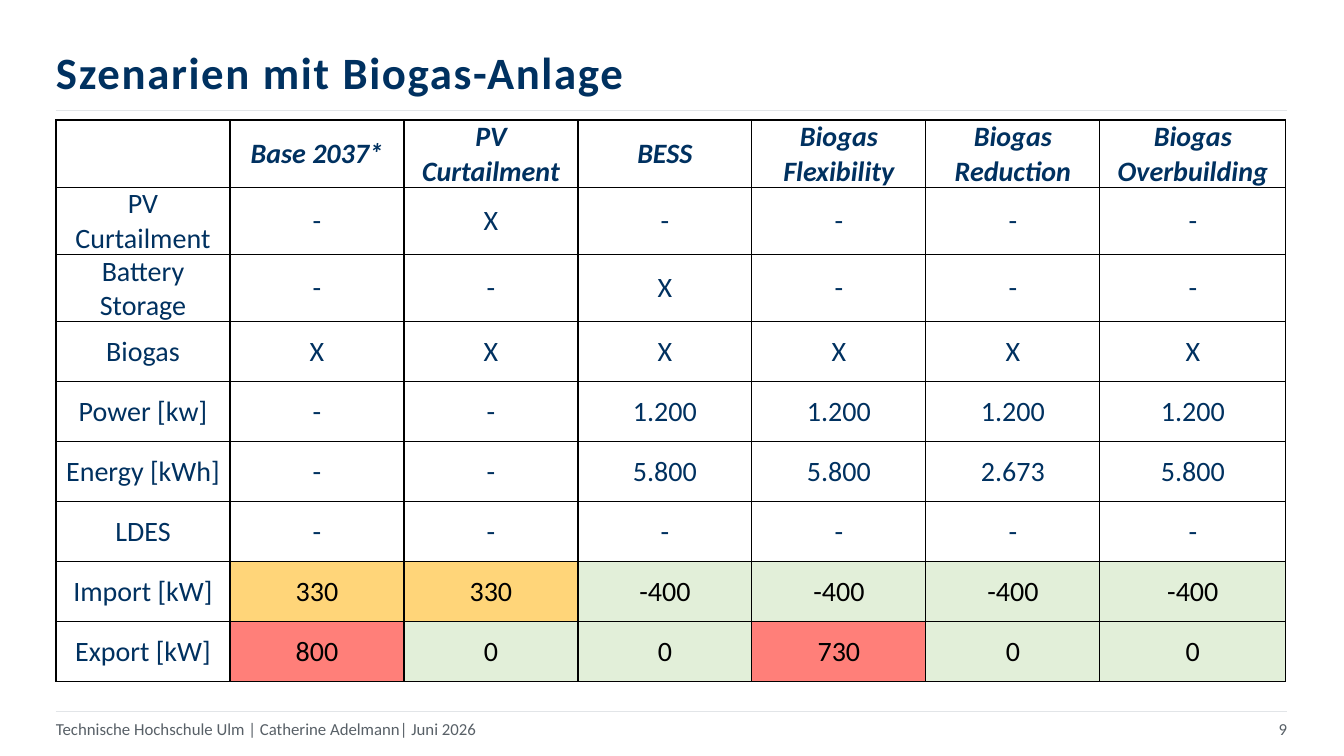
"""Build the slide comparing the biogas plant scenarios."""
from lxml import etree
from pptx import Presentation
from pptx.dml.color import RGBColor
from pptx.enum.shapes import MSO_CONNECTOR
from pptx.enum.text import MSO_ANCHOR, PP_ALIGN
from pptx.oxml import parse_xml
from pptx.oxml.ns import nsdecls, qn
from pptx.util import Pt

PX = 914400 / 100.8
NAVY = RGBColor(0x00, 0x31, 0x60)
GREY = RGBColor(0x58, 0x60, 0x67)
RULE = RGBColor(0xE2, 0xE5, 0xE8)
BLACK = RGBColor(0x00, 0x00, 0x00)
AMBER = RGBColor(0xFF, 0xD5, 0x79)
RED = RGBColor(0xFF, 0x7F, 0x79)
GREEN = RGBColor(0xE2, 0xEF, 0xD9)
MIDDLE = MSO_ANCHOR.MIDDLE
LEFT, CENTER, RIGHT = PP_ALIGN.LEFT, PP_ALIGN.CENTER, PP_ALIGN.RIGHT
STRAIGHT = MSO_CONNECTOR.STRAIGHT


def px(n):
    return round(n * PX)


def set_text(p, text, size, color, align, bold=False, italic=False):
    p.text = text
    p.alignment = align
    p.font.name = "Calibri"
    p.font.size = Pt(size)
    p.font.color.rgb = color
    p.font.bold = bold
    p.font.italic = italic


prs = Presentation()
prs.slide_width, prs.slide_height = px(1344), px(756)
s = prs.slides.add_slide(prs.slide_layouts[6])

for y in (110, 711):
    line = s.shapes.add_connector(STRAIGHT, px(56), px(y), px(1287), px(y))
    line.line.color.rgb = RULE
    line.line.width = Pt(0.5)
    etree.SubElement(line._element.spPr, qn("a:effectLst"))

texts = [
    (56, 48, 1117, 54, "Szenarien mit Biogas-Anlage", 32, NAVY, LEFT, True),
    (56, 720, 1063, 17, "Technische Hochschule Ulm | Catherine Adelmann| Juni 2026",
     12, GREY, LEFT, False),
    (1173, 720, 114, 17, "9", 12, GREY, RIGHT, False),
]
for x, y, w, h, text, size, color, align, is_title in texts:
    tf = s.shapes.add_textbox(px(x), px(y), px(w), px(h)).text_frame
    tf.word_wrap = True
    tf.vertical_anchor = MIDDLE
    tf.margin_left = tf.margin_top = tf.margin_right = tf.margin_bottom = 0
    p = tf.paragraphs[0]
    set_text(p, text, size, color, align, is_title)
    if is_title:
        p.line_spacing = 0.9
        p.runs[0].font._element.set("spc", "120")

rows = [
    ["", "Base 2037*", "PV Curtailment", "BESS", "Biogas Flexibility",
     "Biogas Reduction", "Biogas Overbuilding"],
    ["PV Curtailment", "-", "X", "-", "-", "-", "-"],
    ["Battery Storage", "-", "-", "X", "-", "-", "-"],
    ["Biogas", "X", "X", "X", "X", "X", "X"],
    ["Power [kw]", "-", "-", "1.200", "1.200", "1.200", "1.200"],
    ["Energy [kWh]", "-", "-", "5.800", "5.800", "2.673", "5.800"],
    ["LDES", "-", "-", "-", "-", "-", "-"],
    ["Import [kW]", "330", "330", "-400", "-400", "-400", "-400"],
    ["Export [kW]", "800", "0", "0", "730", "0", "0"],
]
fills = {"330": AMBER, "800": RED, "730": RED, "-400": GREEN, "0": GREEN}
widths = [174] * 6 + [186]
row_h = 60

table = s.shapes.add_table(len(rows), len(widths), px(56), px(120),
                           px(sum(widths)), px(row_h * len(rows))).table
table.first_row = table.horz_banding = False
for column, width in zip(table.columns, widths):
    column.width = px(width)

for i, values in enumerate(rows):
    table.rows[i].height = px(row_h)
    for j, value in enumerate(values):
        cell = table.cell(i, j)
        cell.vertical_anchor = MIDDLE
        cell.margin_left = cell.margin_right = px(7)
        cell.margin_top = cell.margin_bottom = 0
        header = i == 0
        set_text(cell.text_frame.paragraphs[0], value, 20,
                 BLACK if value in fills else NAVY, CENTER, header, header)
        for k, side in enumerate(("lnL", "lnR", "lnT", "lnB")):
            cell._tc.get_or_add_tcPr().insert(k, parse_xml(
                f'<a:{side} {nsdecls("a")} w="12700"><a:solidFill>'
                f'<a:srgbClr val="{BLACK}"/></a:solidFill></a:{side}>'))
        if value in fills:
            cell.fill.solid()
            cell.fill.fore_color.rgb = fills[value]
        else:
            cell.fill.background()

prs.save("out.pptx")
